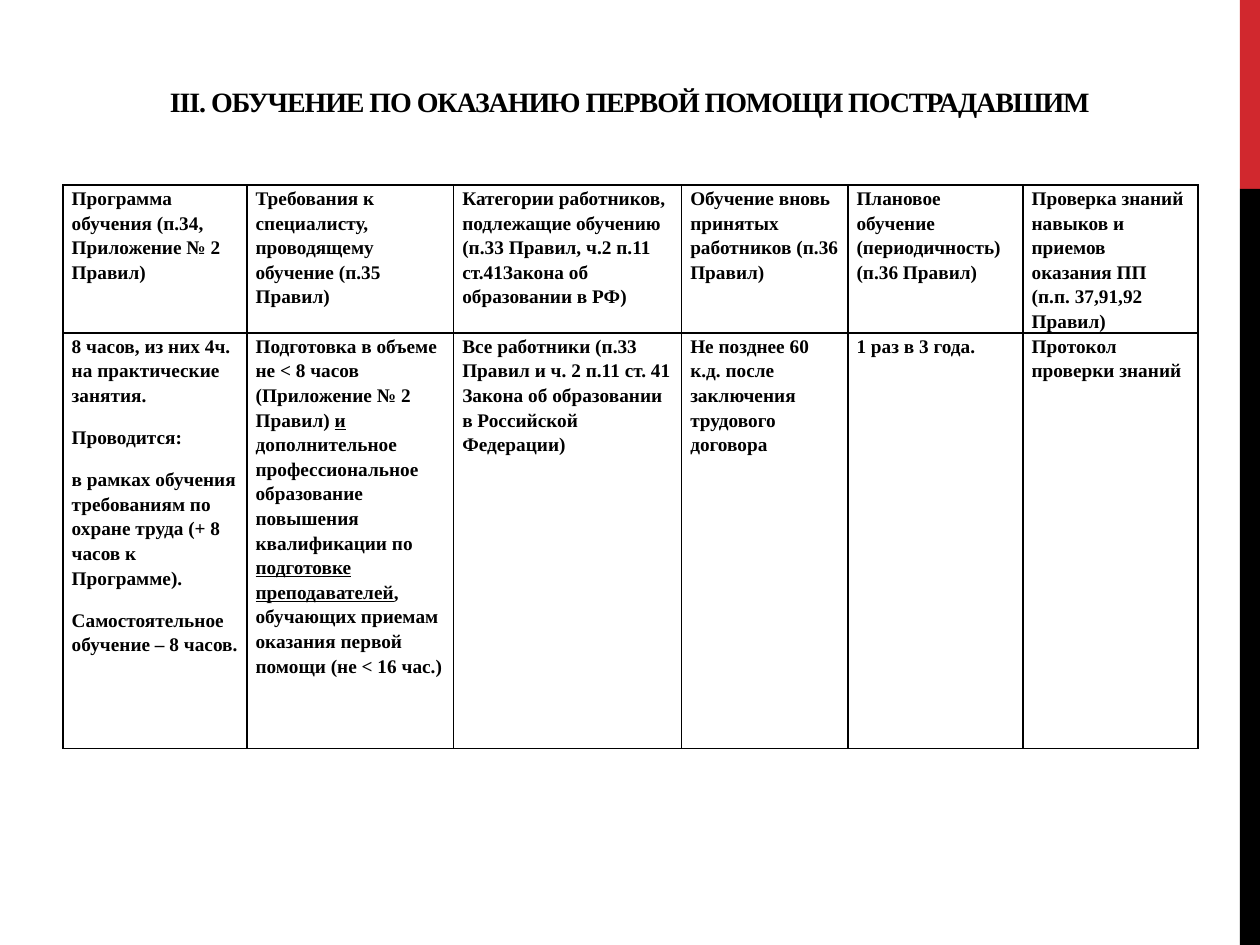
import pptx
import pptx.dml.color
import pptx.enum.shapes
import pptx.enum.text
import pptx.oxml
import pptx.oxml.ns
import pptx.util
from pptx.util import Pt

COLORS = {"red": "D1282E", "black": "000000"}
FONT = "Times New Roman"
TITLE = "III. ОБУЧЕНИЕ ПО ОКАЗАНИЮ ПЕРВОЙ ПОМОЩИ ПОСТРАДАВШИМ"
COLUMN_WIDTHS = [105.1, 118.1, 130.3, 95, 100.1, 100.1]
ROW_HEIGHTS = [79.9, 237.6]
HEADERS = [
    "Программа обучения (п.34, Приложение № 2 Правил)",
    "Требования к специалисту, проводящему обучение (п.35 Правил)",
    "Категории работников, подлежащие обучению (п.33 Правил, ч.2 п.11 ст.41Закона об образовании в РФ)",
    "Обучение вновь принятых работников (п.36 Правил)",
    "Плановое обучение (периодичность) (п.36 Правил)",
    "Проверка знаний навыков и приемов оказания ПП (п.п. 37,91,92 Правил)",
]
# Paragraphs are separated by line ends; underlined words stand between bars.
DETAILS = [
    "8 часов, из них 4ч. на практические занятия.\n"
    "Проводится:\n"
    "в рамках обучения требованиям по охране труда (+ 8 часов к Программе).\n"
    "Самостоятельное обучение – 8 часов.",
    "Подготовка в объеме не < 8 часов (Приложение № 2 Правил) |и| дополнительное "
    "профессиональное образование повышения квалификации по "
    "|подготовке преподавателей|, обучающих приемам оказания первой помощи (не < 16 час.)",
    "Все работники (п.33 Правил и ч. 2 п.11 ст. 41 Закона об образовании в Российской Федерации)",
    "Не позднее 60 к.д. после заключения трудового договора",
    "1 раз в 3 года.",
    "Протокол проверки знаний",
]


def color(name):
    return pptx.dml.color.RGBColor.from_string(COLORS[name])


def format_paragraph(paragraph, size):
    paragraph.line_spacing = 1.15
    paragraph.space_before = Pt(0)
    paragraph.space_after = Pt(10)
    paragraph.font.name = FONT
    paragraph.font.size = Pt(size)
    paragraph.font.bold = True
    paragraph.font.color.rgb = color("black")


def add_side_bar(slide, left, top, width, height):
    """Draw the edge stripe: red for the top fifth, black below."""
    red_height = height / 5
    parts = [("red", top, red_height), ("black", top + red_height, height - red_height)]
    for name, part_top, part_height in parts:
        bar = slide.shapes.add_shape(
            pptx.enum.shapes.MSO_SHAPE.RECTANGLE,
            Pt(left), Pt(part_top), Pt(width), Pt(part_height))
        bar.shadow.inherit = False
        bar.fill.solid()
        bar.fill.fore_color.rgb = color(name)
        bar.line.fill.background()


def set_title(slide, left, top, width, height):
    title = slide.shapes.title
    title.left, title.top, title.width, title.height = map(Pt, (left, top, width, height))
    frame = title.text_frame
    frame.text = TITLE
    frame.word_wrap = True
    frame.auto_size = pptx.enum.text.MSO_AUTO_SIZE.NONE
    frame.vertical_anchor = pptx.enum.text.MSO_ANCHOR.BOTTOM
    frame.margin_bottom = Pt(21)
    paragraph = frame.paragraphs[0]
    paragraph.alignment = pptx.enum.text.PP_ALIGN.CENTER
    format_paragraph(paragraph, 16)
    paragraph.runs[0].font._element.set("spc", "-60")


def add_borders(cell):
    properties = cell._tc.get_or_add_tcPr()
    for index, side in enumerate(("lnL", "lnR", "lnT", "lnB")):
        line = pptx.oxml.parse_xml(
            f'<a:{side} {pptx.oxml.ns.nsdecls("a")} w="{Pt(1)}"><a:solidFill>'
            f'<a:srgbClr val="{COLORS["black"]}"/></a:solidFill></a:{side}>')
        properties.insert(index, line)


def fill_cell(cell, text):
    cell.margin_left = cell.margin_right = Pt(5)
    cell.margin_top = cell.margin_bottom = Pt(0)
    cell.fill.background()
    add_borders(cell)
    frame = cell.text_frame
    for number, line in enumerate(text.split("\n")):
        paragraph = frame.add_paragraph() if number else frame.paragraphs[0]
        format_paragraph(paragraph, 11)
        for index, words in enumerate(line.split("|")):
            run = paragraph.add_run()
            run.text = words
            if index % 2:
                run.font.underline = True


def add_training_table(slide, left, top):
    rows = [HEADERS, DETAILS]
    table = slide.shapes.add_table(
        len(rows), len(HEADERS), Pt(left), Pt(top),
        Pt(sum(COLUMN_WIDTHS)), Pt(sum(ROW_HEIGHTS))).table
    table.first_row = table.horz_banding = False
    for column, width in zip(table.columns, COLUMN_WIDTHS):
        column.width = Pt(width)
    for row, height, texts in zip(table.rows, ROW_HEIGHTS, rows):
        row.height = Pt(height)
        for cell, text in zip(row.cells, texts):
            fill_cell(cell, text)


def main():
    presentation = pptx.Presentation()
    presentation.slide_width, presentation.slide_height = Pt(720), Pt(540)
    slide = presentation.slides.add_slide(presentation.slide_layouts[5])
    add_side_bar(slide, 708.5, 0, 11.5, 540)
    set_title(slide, 36, 21.6, 648, 67)
    add_training_table(slide, 36, 105.8)
    presentation.save("out.pptx")


if __name__ == "__main__":
    main()
